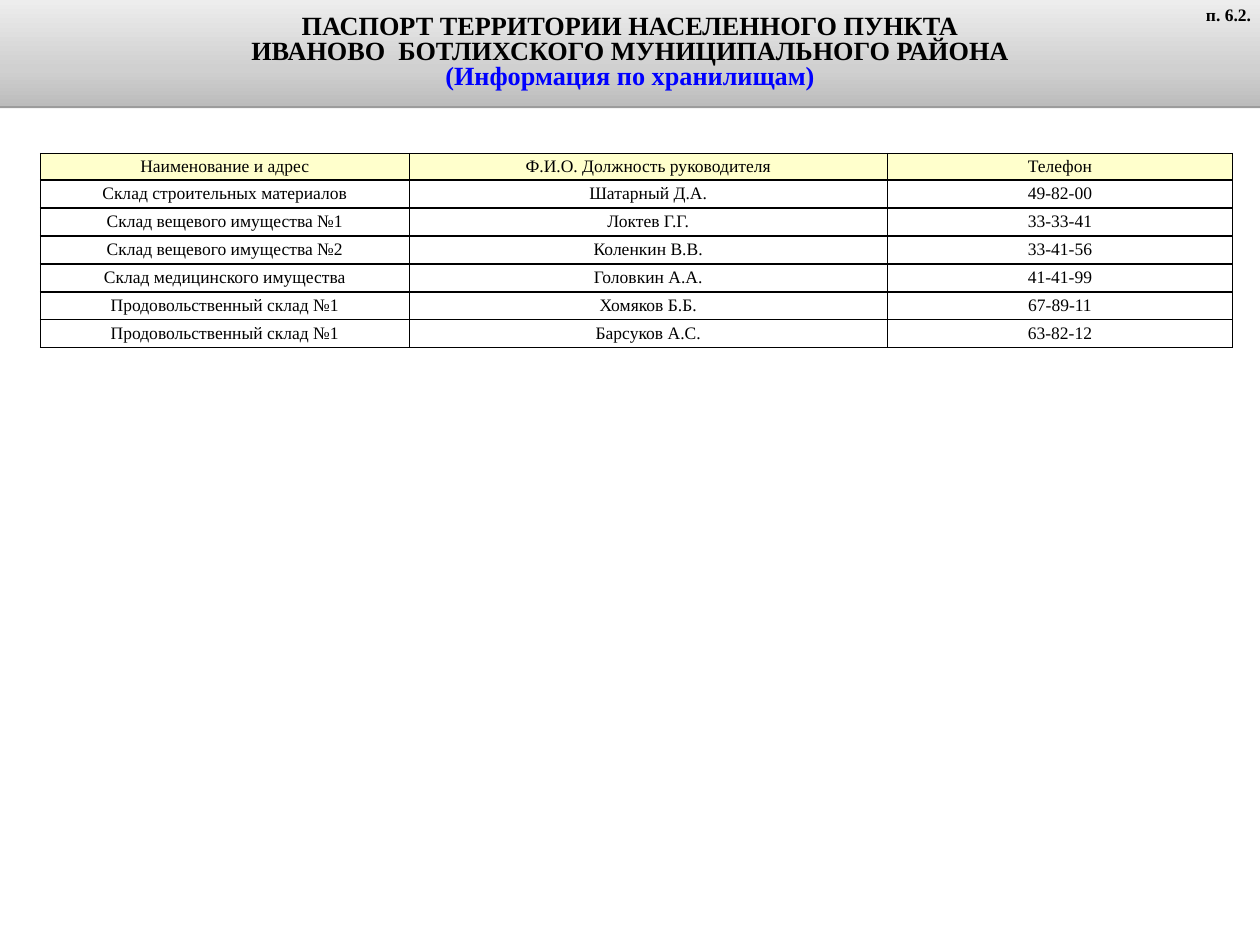
from copy import deepcopy

from lxml.etree import SubElement
from pptx import Presentation
from pptx.dml.color import RGBColor
from pptx.enum.text import MSO_ANCHOR, MSO_AUTO_SIZE, PP_ALIGN
from pptx.oxml.ns import qn
from pptx.util import Cm, Pt

FONT = "Times New Roman"
BLACK = RGBColor(0x00, 0x00, 0x00)
BLUE = RGBColor(0x00, 0x00, 0xFF)
WHITE = RGBColor(0xFF, 0xFF, 0xFF)
CREAM = RGBColor(0xFF, 0xFF, 0xCC)
BANNER_STOPS = [
    (0, RGBColor(0xBC, 0xBC, 0xBC)),
    (0.35, RGBColor(0xD0, 0xD0, 0xD0)),
    (1, RGBColor(0xED, 0xED, 0xED)),
]

SLIDE_WIDTH = Cm(35.56)
TITLE_LINES = [
    ("ПАСПОРТ ТЕРРИТОРИИ НАСЕЛЕННОГО ПУНКТА", BLACK),
    ("ИВАНОВО  БОТЛИХСКОГО МУНИЦИПАЛЬНОГО РАЙОНА", BLACK),
    ("(Информация по хранилищам)", BLUE),
]
COLUMN_WIDTHS = [Cm(10.41), Cm(13.49), Cm(9.75)]
HEADER_HEIGHT = Cm(0.75)
ROW_HEIGHT = Cm(0.79)
WAREHOUSES = [
    ("Наименование и адрес", "Ф.И.О. Должность руководителя", "Телефон"),
    ("Склад строительных материалов", "Шатарный Д.А.", "49-82-00"),
    ("Склад вещевого имущества №1", "Локтев Г.Г.", "33-33-41"),
    ("Склад вещевого имущества №2", "Коленкин В.В.", "33-41-56"),
    ("Склад медицинского имущества", "Головкин А.А.", "41-41-99"),
    ("Продовольственный склад №1", "Хомяков Б.Б.", "67-89-11"),
    ("Продовольственный склад №1", "Барсуков А.С.", "63-82-12"),
]


def write(paragraph, text, size=14, color=BLACK, bold=False,
          align=PP_ALIGN.CENTER, line_spacing=1.0):
    paragraph.alignment = align
    paragraph.line_spacing = line_spacing
    run = paragraph.add_run()
    run.text = text
    run.font.name = FONT
    run.font.size = Pt(size)
    run.font.bold = bold
    run.font.color.rgb = color


def fill_banner(banner):
    banner.fill.gradient()
    banner.fill.gradient_angle = 90
    stop_list = banner.element.spPr.find(".//" + qn("a:gsLst"))
    stop_list.insert(1, deepcopy(stop_list[0]))
    for stop, (position, color) in zip(banner.fill.gradient_stops, BANNER_STOPS):
        stop.position = position
        stop.color.rgb = color


def cast_shadow(banner):
    effects = SubElement(banner.element.spPr, qn("a:effectLst"))
    shadow = SubElement(effects, qn("a:outerShdw"), blurRad="0",
                        dist=str(Pt(1.6)), dir="5400000", rotWithShape="0")
    tint = SubElement(shadow, qn("a:srgbClr"), val=str(BLACK))
    SubElement(tint, qn("a:alpha"), val="38000")


def format_title(banner):
    banner.left, banner.top = Cm(0), Cm(0)
    banner.width, banner.height = SLIDE_WIDTH, Cm(3)
    fill_banner(banner)
    cast_shadow(banner)
    frame = banner.text_frame
    frame.word_wrap = True
    frame.auto_size = MSO_AUTO_SIZE.NONE
    frame.vertical_anchor = MSO_ANCHOR.MIDDLE
    for index, (line, color) in enumerate(TITLE_LINES):
        paragraph = frame.add_paragraph() if index else frame.paragraphs[0]
        write(paragraph, line, size=21, color=color, bold=True, line_spacing=0.8)


def add_section_number(slide, text):
    width = Cm(2.39)
    section = slide.shapes.add_textbox(SLIDE_WIDTH - width, Cm(0), width, Cm(0.84))
    section.text_frame.word_wrap = True
    section.text_frame.auto_size = MSO_AUTO_SIZE.SHAPE_TO_FIT_TEXT
    write(section.text_frame.paragraphs[0], text, bold=True, align=PP_ALIGN.RIGHT)


def border_cell(cell):
    properties = cell._tc.get_or_add_tcPr()
    for index, side in enumerate(("a:lnL", "a:lnR", "a:lnT", "a:lnB")):
        line = SubElement(properties, qn(side), w=str(Pt(1)))
        solid = SubElement(line, qn("a:solidFill"))
        SubElement(solid, qn("a:srgbClr"), val=str(BLACK))
        properties.insert(index, line)


def format_cell(cell, text, background):
    cell.fill.solid()
    cell.fill.fore_color.rgb = background
    cell.vertical_anchor = MSO_ANCHOR.MIDDLE
    cell.margin_left = cell.margin_right = Cm(0.08)
    cell.margin_top = cell.margin_bottom = Cm(0.08)
    border_cell(cell)
    write(cell.text_frame.paragraphs[0], text)


def add_warehouse_table(slide):
    heights = [HEADER_HEIGHT] + [ROW_HEIGHT] * (len(WAREHOUSES) - 1)
    table = slide.shapes.add_table(
        len(heights), len(COLUMN_WIDTHS), Cm(1.14), Cm(4.33),
        sum(COLUMN_WIDTHS), sum(heights)).table
    for column, width in zip(table.columns, COLUMN_WIDTHS):
        column.width = width
    for row, height, entries in zip(table.rows, heights, WAREHOUSES):
        row.height = height
        background = CREAM if entries is WAREHOUSES[0] else WHITE
        for cell, text in zip(row.cells, entries):
            format_cell(cell, text, background)


def main():
    presentation = Presentation()
    presentation.slide_width = SLIDE_WIDTH
    presentation.slide_height = Cm(26.67)
    slide = presentation.slides.add_slide(presentation.slide_layouts[5])
    format_title(slide.shapes.title)
    add_warehouse_table(slide)
    add_section_number(slide, "п. 6.2.")
    presentation.save("out.pptx")


if __name__ == "__main__":
    main()
